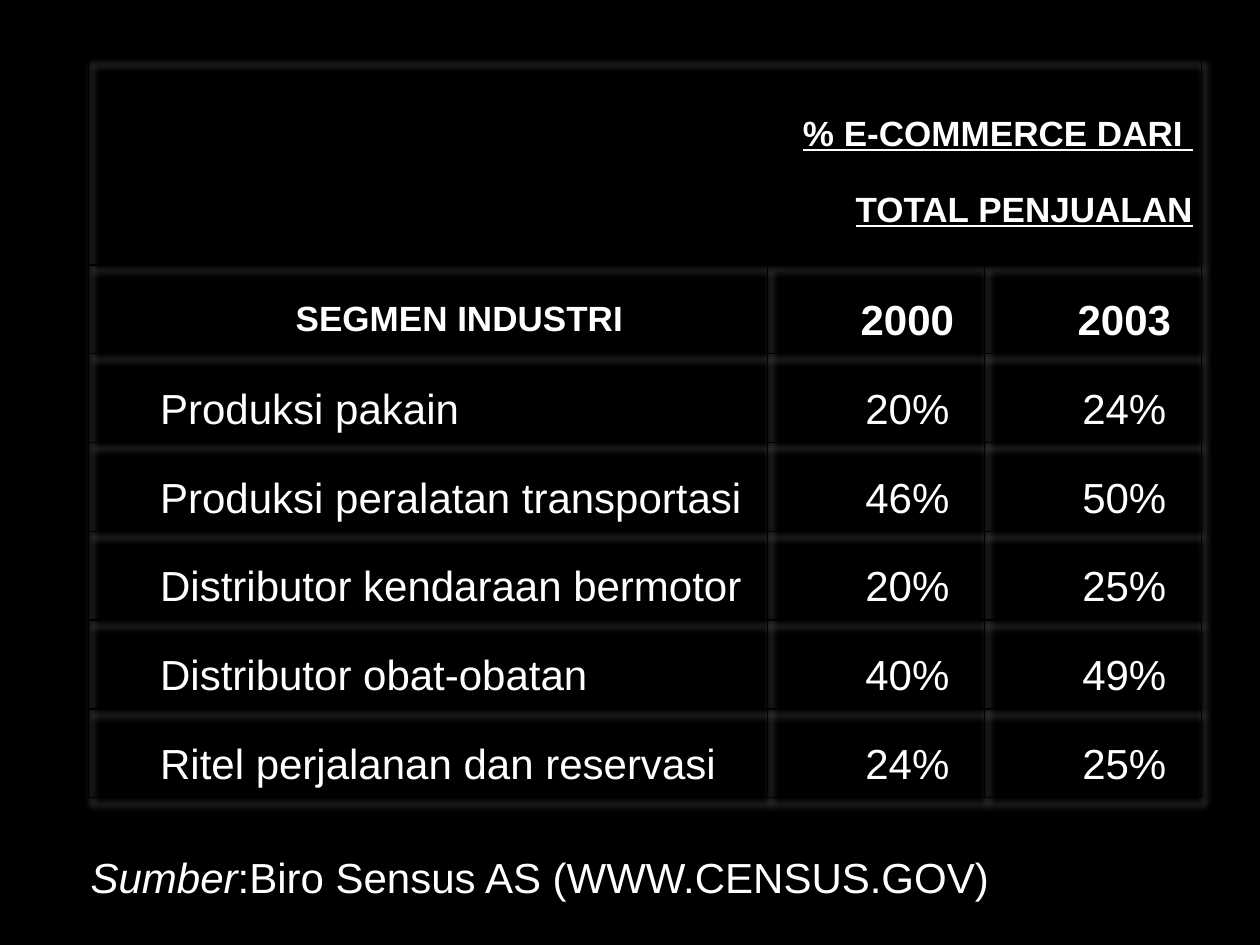
from lxml.etree import SubElement
from pptx import Presentation
from pptx.dml.color import RGBColor
from pptx.enum.text import MSO_ANCHOR, PP_ALIGN
from pptx.oxml import parse_xml
from pptx.oxml.ns import qn
from pptx.util import Pt

NO_STYLE = "{2D5ABB26-0587-4C30-8999-92F81FD0307C}"
SHADOW = (
    '<a:effectLst xmlns:a="http://schemas.openxmlformats.org/drawingml/2006/main">'
    '<a:outerShdw blurRad="50800" dist="50800" dir="3600000" algn="tl" rotWithShape="0">'
    '<a:srgbClr val="FFFFFF"><a:alpha val="40000"/></a:srgbClr>'
    "</a:outerShdw></a:effectLst>"
)
HEADING = ["% E-COMMERCE DARI ", "TOTAL PENJUALAN"]
COLUMNS = ["SEGMEN INDUSTRI", "2000", "2003"]
SEGMENTS = [
    ("Produksi pakain", "20%", "24%"),
    ("Produksi peralatan transportasi", "46%", "50%"),
    ("Distributor kendaraan bermotor", "20%", "25%"),
    ("Distributor obat-obatan", "40%", "49%"),
    ("Ritel perjalanan dan reservasi", "24%", "25%"),
]


def color(value):
    return RGBColor.from_string(value)


class Deck:
    font = "Arial"
    ink = "FFFFFF"
    paper = "000000"

    def __init__(self, width, height):
        self.prs = Presentation()
        self.prs.slide_width, self.prs.slide_height = Pt(width), Pt(height)
        self.s = self.prs.slides.add_slide(self.prs.slide_layouts[5])
        fill = self.s.background.fill
        fill.solid()
        fill.fore_color.rgb = color(self.paper)

    def format(self, r, size, bold=False, italic=False, underline=False):
        f = r.font
        f.name, f.size, f.color.rgb = self.font, Pt(size), color(self.ink)
        f.bold, f.italic, f.underline = bold, italic, underline

    def title(self, left, top, width, height, label, text):
        sp = self.s.shapes.title
        sp.left, sp.top, sp.width, sp.height = map(Pt, (left, top, width, height))
        tf = sp.text_frame
        tf.vertical_anchor = MSO_ANCHOR.MIDDLE
        p = tf.paragraphs[0]
        p.alignment = PP_ALIGN.LEFT
        for part, italic in ((label, True), (text, False)):
            r = p.add_run()
            r.text = part
            self.format(r, 24, italic=italic)

    def table(self, left, top, widths, heights):
        frame = self.s.shapes.add_table(
            len(heights), len(widths), Pt(left), Pt(top), Pt(sum(widths)), Pt(sum(heights))
        )
        table = frame.table
        table.first_row = table.horz_banding = False
        for column, width in zip(table.columns, widths):
            column.width = Pt(width)
        for row, height in zip(table.rows, heights):
            row.height = Pt(height)
        props = table._tbl.tblPr
        props.find(qn("a:tableStyleId")).text = NO_STYLE
        props.insert(0, parse_xml(SHADOW))
        for cell in table.iter_cells():
            self.borders(cell)
            cell.fill.background()
        return table

    def borders(self, cell):
        props = cell._tc.get_or_add_tcPr()
        for side in ("L", "R", "T", "B"):
            line = SubElement(props, qn(f"a:ln{side}"), w=str(Pt(1)))
            SubElement(SubElement(line, qn("a:solidFill")), qn("a:srgbClr"), val=self.paper)

    def cell(self, cell, lines, align, after=0, **style):
        cell.margin_left = cell.margin_right = Pt(5)
        cell.margin_top = cell.margin_bottom = 0
        cell.vertical_anchor = MSO_ANCHOR.MIDDLE
        tf = cell.text_frame
        tf.text = "\n".join(lines)
        for p in tf.paragraphs:
            p.alignment, p.line_spacing, p.space_after = align, 1.5, Pt(after)
            p._p.get_or_add_pPr().set("marL", str(Pt(36)))
            self.format(p.runs[0], **style)


def main():
    deck = Deck(720, 540)
    table = deck.table(50.5, 34, [388, 124, 124], [117.4] + [50.75] * 6)
    table.cell(0, 0).merge(table.cell(0, 2))
    deck.cell(table.cell(0, 0), HEADING, PP_ALIGN.RIGHT, 10, size=20, bold=True, underline=True)
    for row, values in enumerate([COLUMNS] + SEGMENTS, 1):
        header = row == 1
        for col, value in enumerate(values):
            align = PP_ALIGN.CENTER if header or col else PP_ALIGN.LEFT
            size = 20 if header and col == 0 else 24
            after = 10 if col == 2 else 0
            deck.cell(table.cell(row, col), [value], align, after, size=size, bold=header)
    deck.title(44.6, 478, 625.7, 45.4, "Sumber", ":Biro Sensus AS (WWW.CENSUS.GOV)")
    deck.prs.save("out.pptx")


if __name__ == "__main__":
    main()
